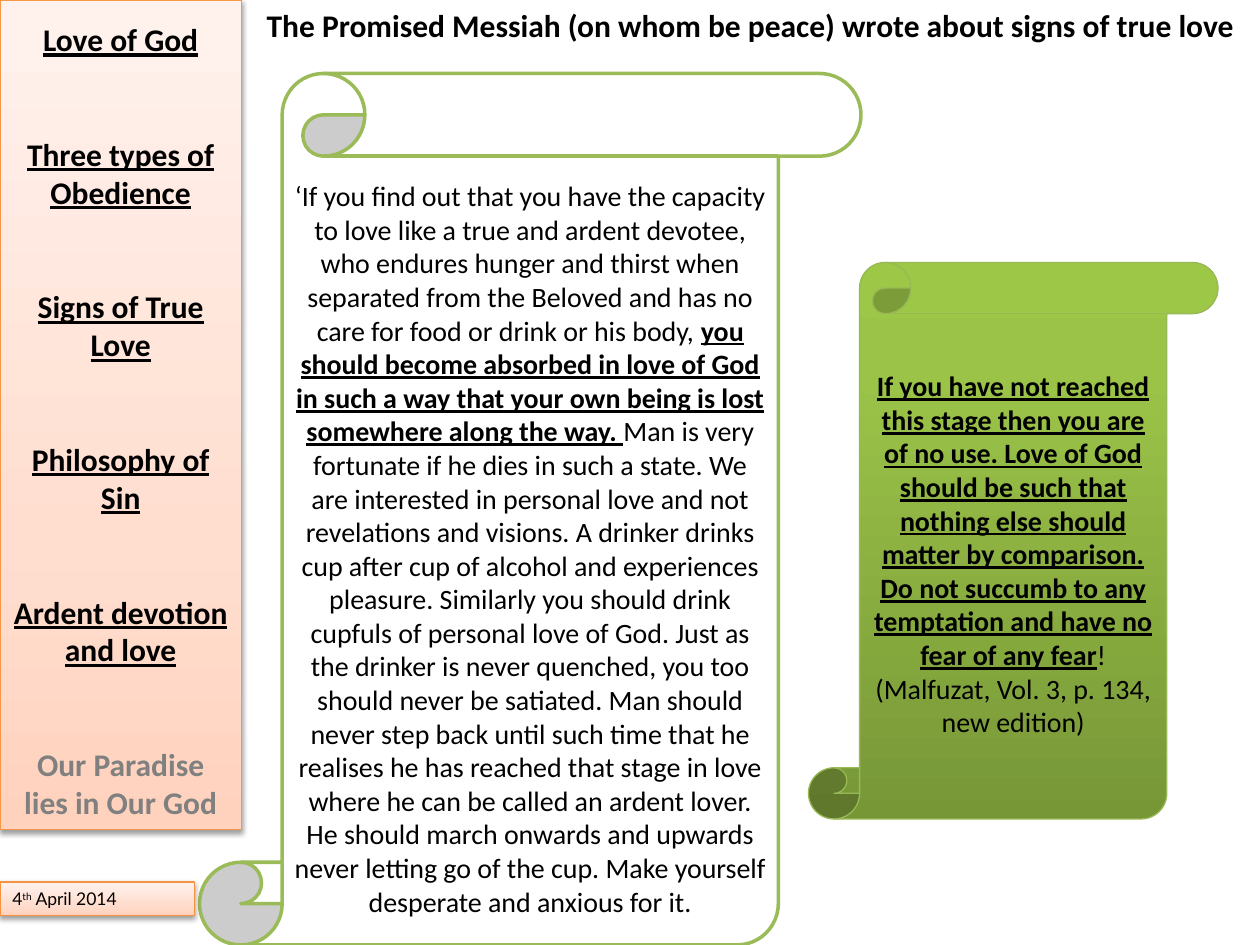
from dataclasses import dataclass, field
from typing import Optional

from lxml.etree import SubElement
from pptx import Presentation
from pptx.dml.color import RGBColor
from pptx.enum.shapes import MSO_SHAPE
from pptx.enum.text import MSO_ANCHOR, PP_ALIGN
from pptx.oxml.ns import qn
from pptx.util import Inches, Pt

COLUMNS, ROWS = 120, 90
SLIDE_WIDTH, SLIDE_HEIGHT = Inches(10), Inches(7.5)

COLORS = {
    "black": "000000", "gray": "808080", "white": "FFFFFF",
    "orange": "F79646", "date_edge": "F69240",
    "green": "9BBB59", "leaf_edge": "98B955",
}
GRADIENTS = {
    "peach": [(0, "FFD2BD"), (35, "FFDED0"), (100, "FFF2ED")],
    "leaf": [(0, "779737"), (80, "9BC348"), (100, "9DC746")],
}
STRONG = {"bold": True, "underline": True}


@dataclass
class Span:
    text: str
    format: dict = field(default_factory=dict)
    color: str = "black"
    baseline: int = 0


@dataclass
class Panel:
    column: float
    row: float
    columns: float
    rows: float
    paragraphs: list[list[Span]]
    geometry: MSO_SHAPE = MSO_SHAPE.RECTANGLE
    fill: Optional[str] = None
    line: Optional[str] = None
    line_width: float = 0.75
    shadow: bool = False
    size: float = 16
    font: str = "Calibri"
    alignment: PP_ALIGN = PP_ALIGN.CENTER
    gap: float = 0
    frame: dict = field(default_factory=dict)


def apply_format(target, values: dict) -> None:
    for name, value in values.items():
        setattr(target, name, value)


def rgb(name: str) -> RGBColor:
    return RGBColor.from_string(COLORS[name])


def fill_gradient(shape, stops: list[tuple[int, str]]) -> None:
    shape.fill.gradient()
    shape.fill.gradient_angle = 90
    stop_list = shape._element.spPr.find(qn("a:gradFill")).find(qn("a:gsLst"))
    for stop in list(stop_list):
        stop_list.remove(stop)
    for position, color in stops:
        stop = SubElement(stop_list, qn("a:gs"), pos=str(position * 1000))
        SubElement(stop, qn("a:srgbClr"), val=color)


def add_shadow(shape) -> None:
    effects = shape._element.spPr.find(qn("a:effectLst"))
    shadow = SubElement(
        effects, qn("a:outerShdw"), blurRad=str(Pt(3.1)), dist=str(Pt(1.6)),
        dir="5400000", rotWithShape="0",
    )
    color = SubElement(shadow, qn("a:srgbClr"), val=COLORS["black"])
    SubElement(color, qn("a:alpha"), val="38000")


def paint(shape, panel: Panel) -> None:
    shape.shadow.inherit = False
    if panel.fill in GRADIENTS:
        fill_gradient(shape, GRADIENTS[panel.fill])
    else:
        shape.fill.solid()
        shape.fill.fore_color.rgb = rgb(panel.fill)
    shape.line.color.rgb = rgb(panel.line)
    shape.line.width = Pt(panel.line_width)
    if panel.shadow:
        add_shadow(shape)


def write(text_frame, panel: Panel) -> None:
    apply_format(text_frame, {"word_wrap": True, **panel.frame})
    for index, spans in enumerate(panel.paragraphs):
        paragraph = text_frame.add_paragraph() if index else text_frame.paragraphs[0]
        paragraph.alignment = panel.alignment
        if index and panel.gap:
            paragraph.space_before = Pt(panel.gap)
        for span in spans:
            run = paragraph.add_run()
            run.text = span.text
            apply_format(run.font, {"name": panel.font, "size": Pt(panel.size), **span.format})
            run.font.color.rgb = rgb(span.color)
            if span.baseline:
                run._r.get_or_add_rPr().set("baseline", str(span.baseline * 1000))


def draw(slide, panel: Panel) -> None:
    box = (
        round(SLIDE_WIDTH * panel.column / COLUMNS),
        round(SLIDE_HEIGHT * panel.row / ROWS),
        round(SLIDE_WIDTH * panel.columns / COLUMNS),
        round(SLIDE_HEIGHT * panel.rows / ROWS),
    )
    if panel.fill:
        shape = slide.shapes.add_shape(panel.geometry, *box)
        paint(shape, panel)
    else:
        shape = slide.shapes.add_textbox(*box)
    write(shape.text_frame, panel)


TOPICS = [
    "Love of God", "Three types of Obedience", "Signs of True Love",
    "Philosophy of Sin", "Ardent devotion and love",
]
QUOTE = [
    Span("‘If you find out that you have the capacity to love like a true and ardent "
         "devotee, who endures hunger and thirst when separated from the Beloved and has "
         "no care for food or drink or his body, "),
    Span("you should become absorbed in love of God in such a way that your own being "
         "is lost somewhere along the way. ", STRONG),
    Span("Man is very fortunate if he dies in such a state. We are interested in personal "
         "love and not revelations and visions. A drinker drinks cup after cup of alcohol "
         "and experiences pleasure. Similarly you should drink cupfuls of personal love of "
         "God. Just as the drinker is never quenched, you too should never be satiated. Man "
         "should never step back until such time that he realises he has reached that stage "
         "in love where he can be called an ardent lover. He should march onwards and "
         "upwards never letting go of the cup. Make yourself desperate and anxious for it."),
]
CONCLUSION = [
    Span("If you have not reached this stage then you are of no use. Love of God should be "
         "such that nothing else should matter by comparison. Do not succumb to any "
         "temptation and have no fear of any fear", STRONG),
    Span("! (Malfuzat, Vol. 3, p. 134, new edition)"),
]
PANELS = [
    Panel(0, 0, 23, 79,
          [[Span(topic, STRONG)] for topic in TOPICS]
          + [[Span("Our Paradise lies in Our God", {"bold": True}, "gray")]],
          fill="peach", line="orange", shadow=True, size=18, gap=44,
          frame={"vertical_anchor": MSO_ANCHOR.TOP, "margin_top": Inches(0.16)}),
    Panel(19, 7, 63, 83, [QUOTE], MSO_SHAPE.VERTICAL_SCROLL, "white", "green", 2,
          frame={"vertical_anchor": MSO_ANCHOR.MIDDLE, "margin_top": Inches(0.34)}),
    Panel(23, 0, 97, 4.8,
          [[Span("The Promised Messiah (on whom be peace) wrote about signs of true love",
                 {"bold": True})]], size=18),
    Panel(0, 84, 18.5, 3.2,
          [[Span("4"), Span("th", baseline=30), Span(" April 2014")]],
          fill="peach", line="date_edge", shadow=True, size=10, font="Lato",
          alignment=PP_ALIGN.LEFT,
          frame={"word_wrap": False, "vertical_anchor": MSO_ANCHOR.TOP}),
    Panel(77, 25, 39, 53, [CONCLUSION], MSO_SHAPE.VERTICAL_SCROLL, "leaf", "leaf_edge",
          frame={"vertical_anchor": MSO_ANCHOR.MIDDLE}),
]


def main() -> None:
    presentation = Presentation()
    apply_format(presentation, {"slide_width": SLIDE_WIDTH, "slide_height": SLIDE_HEIGHT})
    slide = presentation.slides.add_slide(presentation.slide_layouts[6])
    for panel in PANELS:
        draw(slide, panel)
    presentation.save("out.pptx")


if __name__ == "__main__":
    main()
